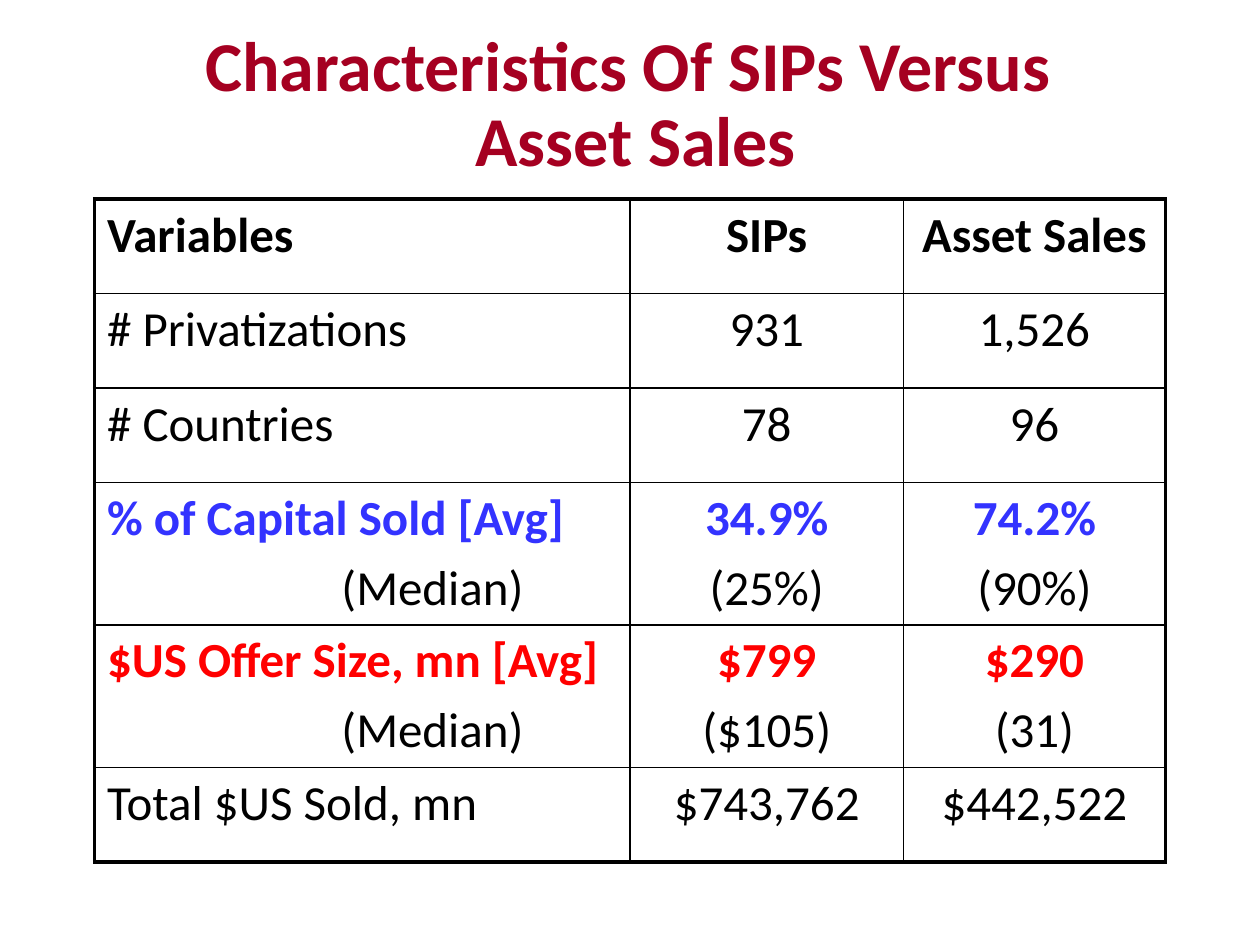
from lxml import etree
from pptx import Presentation
from pptx.dml.color import RGBColor
from pptx.enum import text
from pptx.oxml import ns
from pptx.util import Inches, Pt

BLACK = RGBColor(0, 0, 0)
BLUE = RGBColor(0x33, 0x33, 0xFF)
RED = RGBColor(0xFF, 0, 0)
WINE = RGBColor(0xA5, 0, 0x21)
FONT = "Calibri"

# Content: first-line colour, first-line bold, then the cells (tuples hold lines)
TITLE = ["Characteristics Of SIPs Versus ", "Asset Sales"]
ROWS = [
    (BLACK, True, [("Variables",), ("SIPs",), ("Asset Sales",)]),
    (BLACK, False, [("# Privatizations",), ("931",), ("1,526",)]),
    (BLACK, False, [("# Countries",), ("78",), ("96",)]),
    (BLUE, True, [("% of Capital Sold [Avg]", "(Median)"),
                  ("34.9%", "(25%)"), ("74.2%", "(90%)")]),
    (RED, True, [("$US Offer Size, mn [Avg]", "(Median)"),
                 ("$799", "($105)"), ("$290", "(31)")]),
    (BLACK, False, [("Total $US Sold, mn",), ("$743,762",), ("$442,522",)]),
]
COLS = [4.25, 2.17, 2.08]
HIGH = {1: 0.75, 2: 1.13}  # row height by number of lines
INDENT = 1.86
THIN, THICK = 1, 2.25


def write(para, words, size, color, bold):
    run = para.add_run()
    run.text = words
    font = run.font
    font.name, font.size, font.bold = FONT, Pt(size), bold
    font.color.rgb = color


def border(cell, widths):
    props = cell._tc.get_or_add_tcPr()
    for i, (side, width) in enumerate(widths.items()):
        line = etree.Element(ns.qn("a:ln" + side), w=str(Pt(width)))
        fill = etree.SubElement(line, ns.qn("a:solidFill"))
        etree.SubElement(fill, ns.qn("a:srgbClr"), val=str(BLACK))
        props.insert(i, line)


def main():
    deck = Presentation()
    deck.slide_width, deck.slide_height = Inches(10), Inches(7.5)
    slide = deck.slides.add_slide(deck.slide_layouts[6])

    # Title
    box = slide.shapes.add_textbox(
        Inches(0.42), Inches(0.25), Inches(9.25), Inches(1.17))
    frame = box.text_frame
    frame.word_wrap = True
    frame.vertical_anchor = text.MSO_ANCHOR.MIDDLE
    para = frame.paragraphs[0]
    para.alignment = text.PP_ALIGN.CENTER
    para.line_spacing = Pt(43)
    for i, words in enumerate(TITLE):
        if i:
            para.add_line_break()
        write(para, words, 40, WINE, True)

    # Table grid
    highs = [HIGH[len(cells[0])] for _, _, cells in ROWS]
    table = slide.shapes.add_table(
        len(ROWS), len(COLS), Inches(0.75), Inches(1.58),
        Inches(sum(COLS)), Inches(sum(highs))).table
    table.first_row = table.horz_banding = False
    for col, width in zip(table.columns, COLS):
        col.width = Inches(width)
    for row, high in zip(table.rows, highs):
        row.height = Inches(high)

    # Cells: thick outer frame, thin inner lines
    for r, (color, bold, cells) in enumerate(ROWS):
        for c, lines in enumerate(cells):
            cell = table.cell(r, c)
            cell.fill.background()
            edges = {"L": c == 0, "R": c == len(COLS) - 1,
                     "T": r == 0, "B": r == len(ROWS) - 1}
            border(cell, {s: THICK if out else THIN
                          for s, out in edges.items()})
            for i, words in enumerate(lines):
                body = cell.text_frame
                para = body.add_paragraph() if i else body.paragraphs[0]
                para.alignment = (text.PP_ALIGN.CENTER if c
                                  else text.PP_ALIGN.LEFT)
                if i:
                    para.space_before = Pt(5.6)
                    if c == 0:
                        para._p.get_or_add_pPr().set(
                            "marL", str(Inches(INDENT)))
                write(para, words, 28, BLACK if i else color,
                      bold and not i)

    deck.save("out.pptx")


if __name__ == "__main__":
    main()
